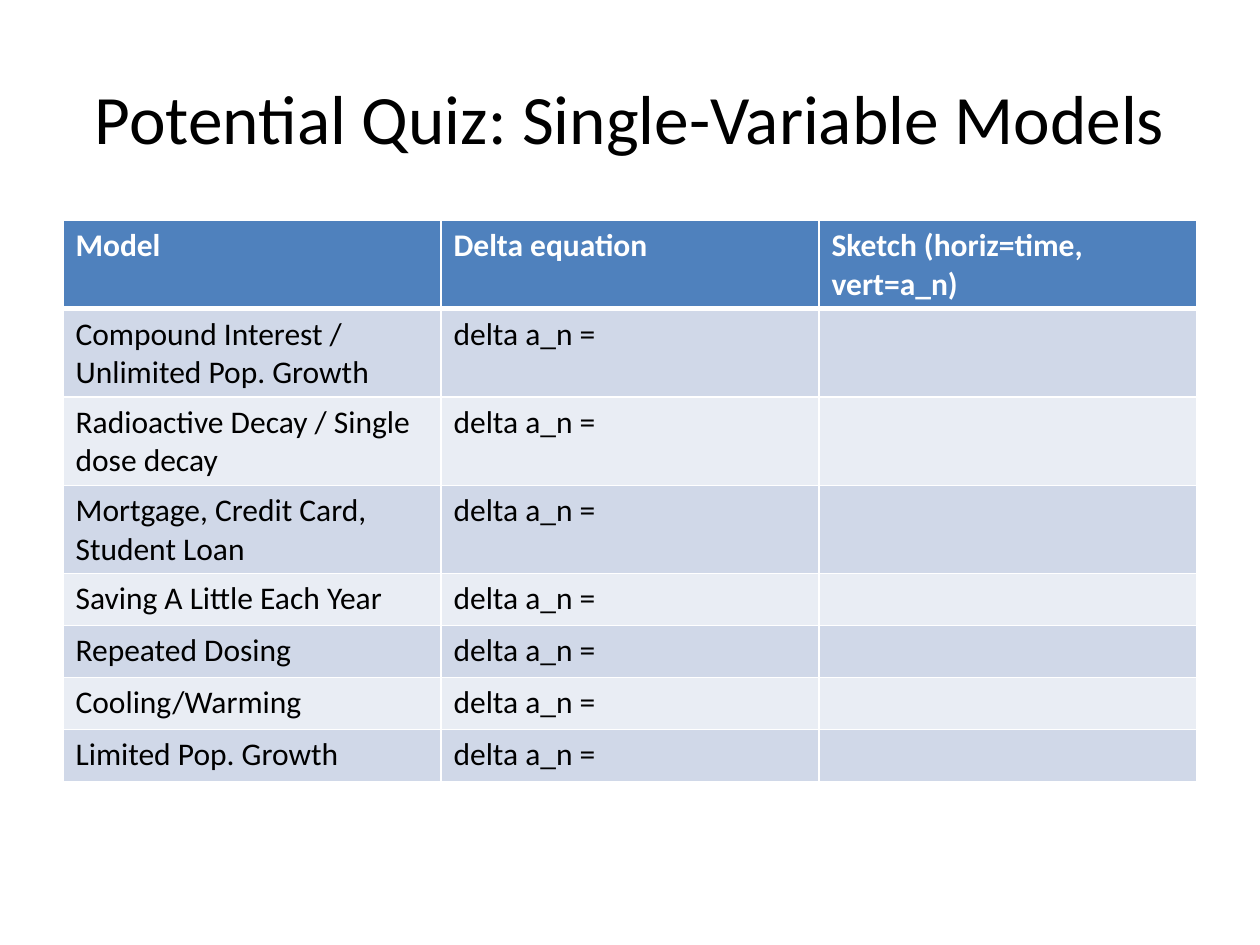
from lxml import etree
from pptx import Presentation, util as u
from pptx.dml.color import RGBColor
from pptx.enum import text
from pptx.oxml.ns import qn

COLORS = {"ink": "000000", "paper": "FFFFFF", "header": "4F81BD",
          "odd": "D0D8E8", "even": "E9EDF4"}
FORMATS = {
    "title": {"size": u.Pt(39.6), "bold": False, "color": "ink"},
    "header": {"size": u.Pt(18), "bold": True, "color": "paper"},
    "body": {"size": u.Pt(18), "bold": False, "color": "ink"},
}
HEADINGS = ["Model", "Delta equation", "Sketch (horiz=time, vert=a_n)"]
MODELS = [
    "Compound Interest / Unlimited Pop. Growth",
    "Radioactive Decay / Single dose decay",
    "Mortgage, Credit Card, Student Loan",
    "Saving A Little Each Year",
    "Repeated Dosing",
    "Cooling/Warming",
    "Limited Pop. Growth",
]


class SlideBuilder:
    """Hold the style and current slide, placing elements on a 200 by 150 grid."""

    def __init__(self, presentation, font="Calibri"):
        self.font = font
        self.unit = presentation.slide_width // 200
        self.slide = presentation.slides.add_slide(presentation.slide_layouts[6])

    def place(self, *cells):
        return [self.unit * cell for cell in cells]

    def set_text(self, paragraph, words, style):
        paragraph.text = words
        font = paragraph.runs[0].font if words else paragraph.font
        values = dict(FORMATS[style], name=self.font)
        font.color.rgb = RGBColor.from_string(COLORS[values.pop("color")])
        for name, value in values.items():
            setattr(font, name, value)

    def title(self, words, *area):
        frame = self.slide.shapes.add_textbox(*self.place(*area)).text_frame
        frame.word_wrap = True
        frame.vertical_anchor = text.MSO_ANCHOR.MIDDLE
        frame.paragraphs[0].alignment = text.PP_ALIGN.CENTER
        self.set_text(frame.paragraphs[0], words, "title")

    def borders(self, cell, widths):
        properties = cell._tc.get_or_add_tcPr()
        for index, (side, width) in enumerate(widths.items()):
            line = etree.Element(qn(f"a:ln{side}"), w=str(u.Pt(width)))
            fill = etree.SubElement(line, qn("a:solidFill"))
            etree.SubElement(fill, qn("a:srgbClr"), val=COLORS["paper"])
            properties.insert(index, line)

    def table(self, rows, *area):
        shape = self.slide.shapes.add_table(len(rows), len(rows[0]), *self.place(*area))
        for row, values in enumerate(rows):
            style = "body" if row else "header"
            band = ("even", "odd")[row % 2] if row else "header"
            widths = {"L": 1, "R": 1, "T": 3 if row == 1 else 1, "B": 1 if row else 3}
            for column, words in enumerate(values):
                cell = shape.table.cell(row, column)
                cell.fill.solid()
                cell.fill.fore_color.rgb = RGBColor.from_string(COLORS[band])
                self.borders(cell, widths)
                self.set_text(cell.text_frame.paragraphs[0], words, style)


def main():
    presentation = Presentation()
    presentation.slide_width, presentation.slide_height = u.Inches(10), u.Inches(7.5)
    builder = SlideBuilder(presentation)
    builder.title("Potential Quiz: Single-Variable Models", 10, 6, 180, 25)
    rows = [HEADINGS] + [[model, "delta a_n =", ""] for model in MODELS]
    builder.table(rows, 10, 35, 180, 66)
    presentation.save("out.pptx")


if __name__ == "__main__":
    main()
